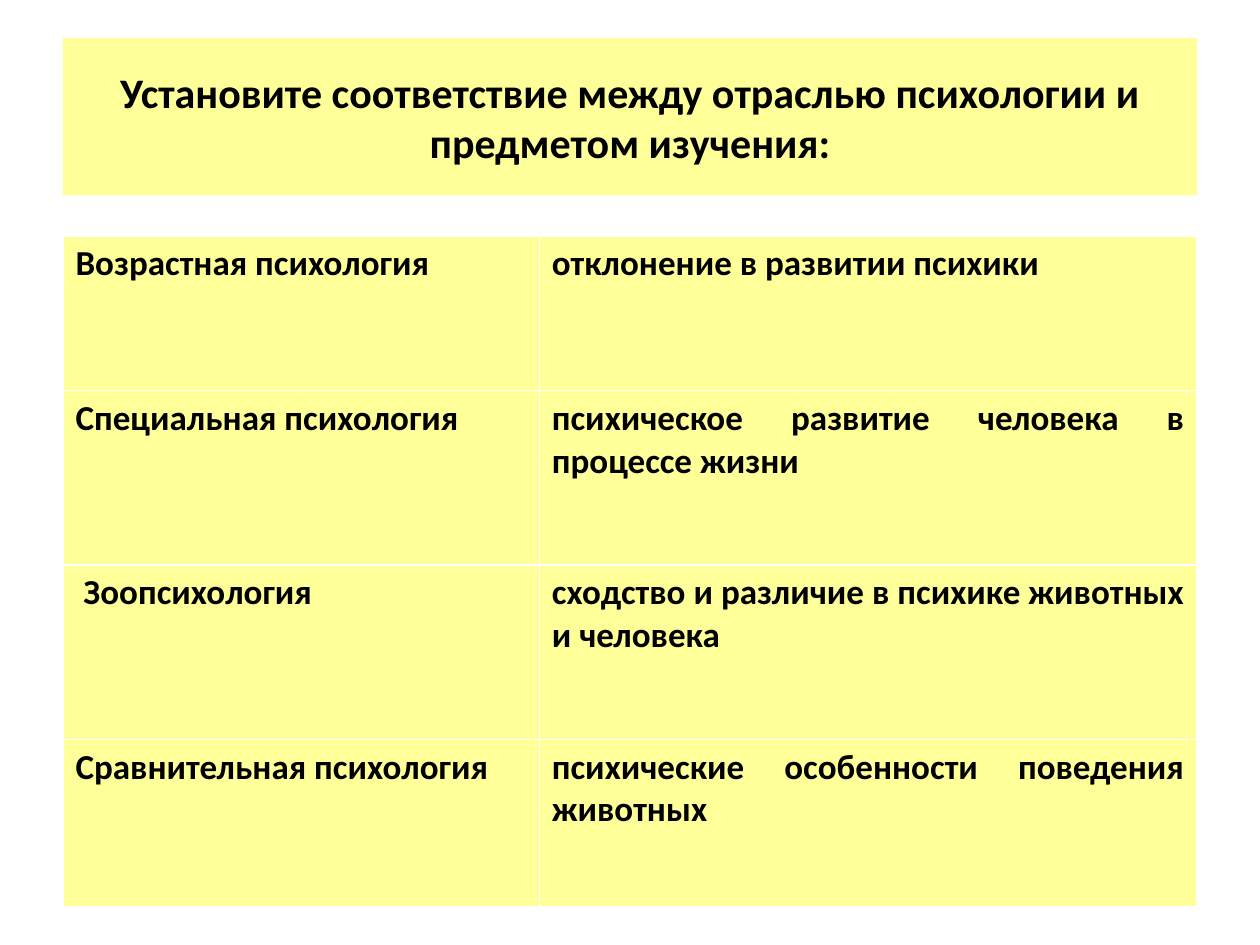
from pptx import Presentation
from pptx import util as u
from pptx.dml.color import RGBColor
from pptx.enum import shapes, text

PAGE_WIDTH, PAGE_HEIGHT = u.Inches(10), u.Inches(7.5)
YELLOW, BLACK = "FFFF99", "000000"
TITLE = "Установите соответствие между отраслью психологии и предметом изучения:"
PAIRS = [
    ("Возрастная психология ", "отклонение в развитии психики"),
    ("Специальная психология ", "психическое развитие человека в процессе жизни"),
    (" Зоопсихология ", "сходство и различие в психике животных и человека"),
    ("Сравнительная психология ", "психические особенности поведения животных"),
]
COLUMN_SHARES = (0.42, 0.58)
ROW_SHARES = (0.23, 0.26, 0.26, 0.25)


def paint(fill, colour):
    fill.solid()
    fill.fore_color.rgb = RGBColor.from_string(colour)


def area(left, top, width, height):
    return (round(left * PAGE_WIDTH), round(top * PAGE_HEIGHT),
            round(width * PAGE_WIDTH), round(height * PAGE_HEIGHT))


def write(frame, words, size, align):
    para = frame.paragraphs[0]
    para.text = words
    para.alignment = align
    para.font.name = "Calibri"
    para.font.size = u.Pt(size)
    para.font.bold = True
    paint(para.font.fill, BLACK)


def add_title(page, box):
    banner = page.shapes.add_shape(shapes.MSO_SHAPE.RECTANGLE, *box)
    banner.shadow.inherit = False
    paint(banner.fill, YELLOW)
    banner.line.fill.background()
    frame = banner.text_frame
    frame.word_wrap = True
    frame.vertical_anchor = text.MSO_ANCHOR.MIDDLE
    write(frame, TITLE, 24, text.PP_ALIGN.CENTER)


def add_pairs(page, box):
    table = page.shapes.add_table(len(PAIRS), len(COLUMN_SHARES), *box).table
    width, height = box[2:]
    for column, share in zip(table.columns, COLUMN_SHARES):
        column.width = round(width * share)
    for row, share, pair in zip(table.rows, ROW_SHARES, PAIRS):
        row.height = round(height * share)
        for cell, words in zip(row.cells, pair):
            paint(cell.fill, YELLOW)
            write(cell.text_frame, words, 20, text.PP_ALIGN.JUSTIFY)


def main():
    deck = Presentation()
    deck.slide_width, deck.slide_height = PAGE_WIDTH, PAGE_HEIGHT
    page = deck.slides.add_slide(deck.slide_layouts[6])
    add_title(page, area(0.05, 0.04, 0.9, 1 / 6))
    add_pairs(page, area(0.05, 0.25, 0.9, 0.71))
    deck.save("out.pptx")


if __name__ == "__main__":
    main()
